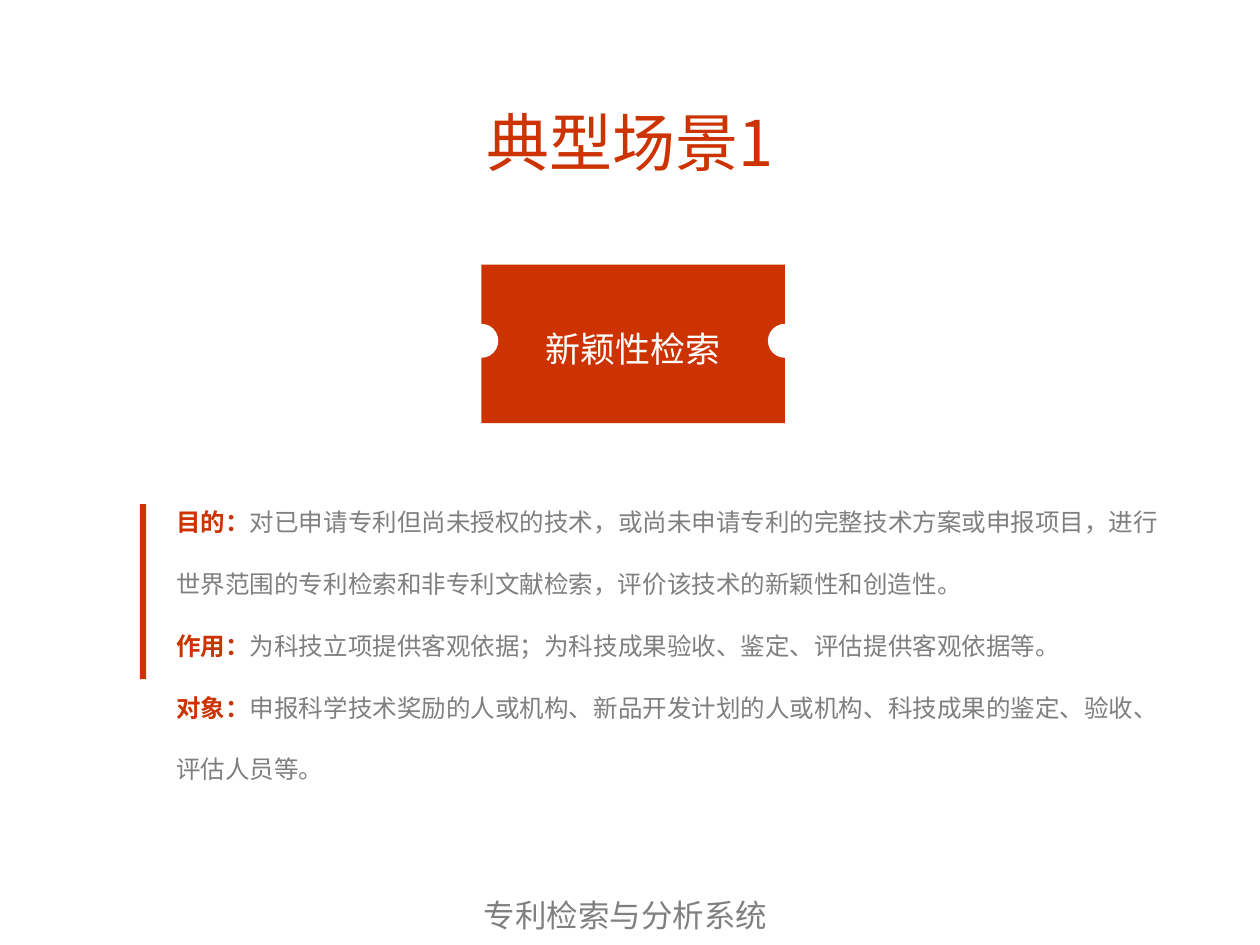
import pptx
import pptx.util
import pptx.dml.color
import pptx.enum.shapes
import pptx.enum.text
import pptx.oxml.ns
import lxml.etree

COLORS = {"red": "CC3300", "label": "CD3300", "white": "FFFFFF",
          "body": "7F7F7F", "footer": "808080"}
LATIN = "Arial"
CJK = "Noto Sans CJK SC"
SHAPE = pptx.enum.shapes.MSO_SHAPE
ANCHOR = pptx.enum.text.MSO_ANCHOR
CENTER = pptx.enum.text.PP_ALIGN.CENTER


class SlideBuilder:
    COLS, ROWS = 100, 75

    def __init__(self, prs):
        self.col = prs.slide_width / self.COLS
        self.row = prs.slide_height / self.ROWS
        self.slide = prs.slides.add_slide(prs.slide_layouts[5])

    def box(self, left, top, width, height):
        return (round(left * self.col), round(top * self.row),
                round(width * self.col), round(height * self.row))

    def color(self, name):
        return pptx.dml.color.RGBColor.from_string(COLORS[name])

    def format_run(self, r, size, color, font=LATIN, bold=False):
        r.font.size = pptx.util.Pt(size)
        r.font.bold = bold
        r.font.name = font
        r.font.color.rgb = self.color(color)
        ea = lxml.etree.SubElement(r.font._element, pptx.oxml.ns.qn("a:ea"))
        ea.set("typeface", CJK)

    def set_text(self, sp, text, size, color, font=LATIN, align=None, spacing=None):
        tf = sp.text_frame
        tf.text = text
        p = tf.paragraphs[0]
        p.alignment = align
        p.line_spacing = spacing
        self.format_run(p.runs[0], size, color, font)

    def title(self, text, *area):
        sp = self.slide.shapes.title
        sp.left, sp.top, sp.width, sp.height = self.box(*area)
        sp.text_frame.vertical_anchor = ANCHOR.MIDDLE
        self.set_text(sp, text, 36, "red", CJK, CENTER)

    def shape(self, kind, color, *area):
        sp = self.slide.shapes.add_shape(kind, *self.box(*area))
        sp.shadow.inherit = False
        sp.fill.solid()
        sp.fill.fore_color.rgb = self.color(color)
        sp.line.fill.background()
        return sp

    def text_box(self, *area):
        sp = self.slide.shapes.add_textbox(*self.box(*area))
        sp.text_frame.word_wrap = True
        return sp

    def ticket(self, text, left, top, width, height, notch, notch_top, inset):
        sp = self.shape(SHAPE.RECTANGLE, "red", left, top, width, height)
        sp.text_frame.vertical_anchor = ANCHOR.MIDDLE
        self.set_text(sp, text, 20, "white", align=CENTER, spacing=1.2)
        for x in (left - inset, left + width + inset - notch):
            self.shape(SHAPE.OVAL, "white", x, notch_top, notch, notch)

    def labelled_text(self, items, *area):
        tf = self.text_box(*area).text_frame
        tf.vertical_anchor = ANCHOR.MIDDLE
        for i, (label, text) in enumerate(items):
            p = tf.add_paragraph() if i else tf.paragraphs[0]
            p.line_spacing = 2.1
            for words, color, bold in ((label, "label", True), (text, "body", False)):
                r = p.add_run()
                r.text = words
                self.format_run(r, 14, color, bold=bold)


def main():
    prs = pptx.Presentation()
    prs.slide_width = pptx.util.Inches(10)
    prs.slide_height = pptx.util.Inches(7.5)
    s = SlideBuilder(prs)
    s.title("典型场景1", 6.9, 4, 86.2, 14.5)
    s.ticket("新颖性检索", 38.2, 21, 24.1, 12.6, notch=2.7, notch_top=25.7, inset=1.35)
    s.shape(SHAPE.RECTANGLE, "red", 11.1, 40, 0.5, 13.9)
    s.labelled_text([
        ("目的：", "对已申请专利但尚未授权的技术，或尚未申请专利的完整技术方案或申报项目，"
                 "进行世界范围的专利检索和非专利文献检索，评价该技术的新颖性和创造性。"),
        ("作用：", "为科技立项提供客观依据；为科技成果验收、鉴定、评估提供客观依据等。"),
        ("对象：", "申报科学技术奖励的人或机构、新品开发计划的人或机构、"
                 "科技成果的鉴定、验收、评估人员等。"),
    ], 13, 33.4, 81.1, 33.1)
    s.set_text(s.text_box(37.4, 70.6, 26.4, 4), "专利检索与分析系统", 18, "footer")
    prs.save("out.pptx")


if __name__ == "__main__":
    main()
